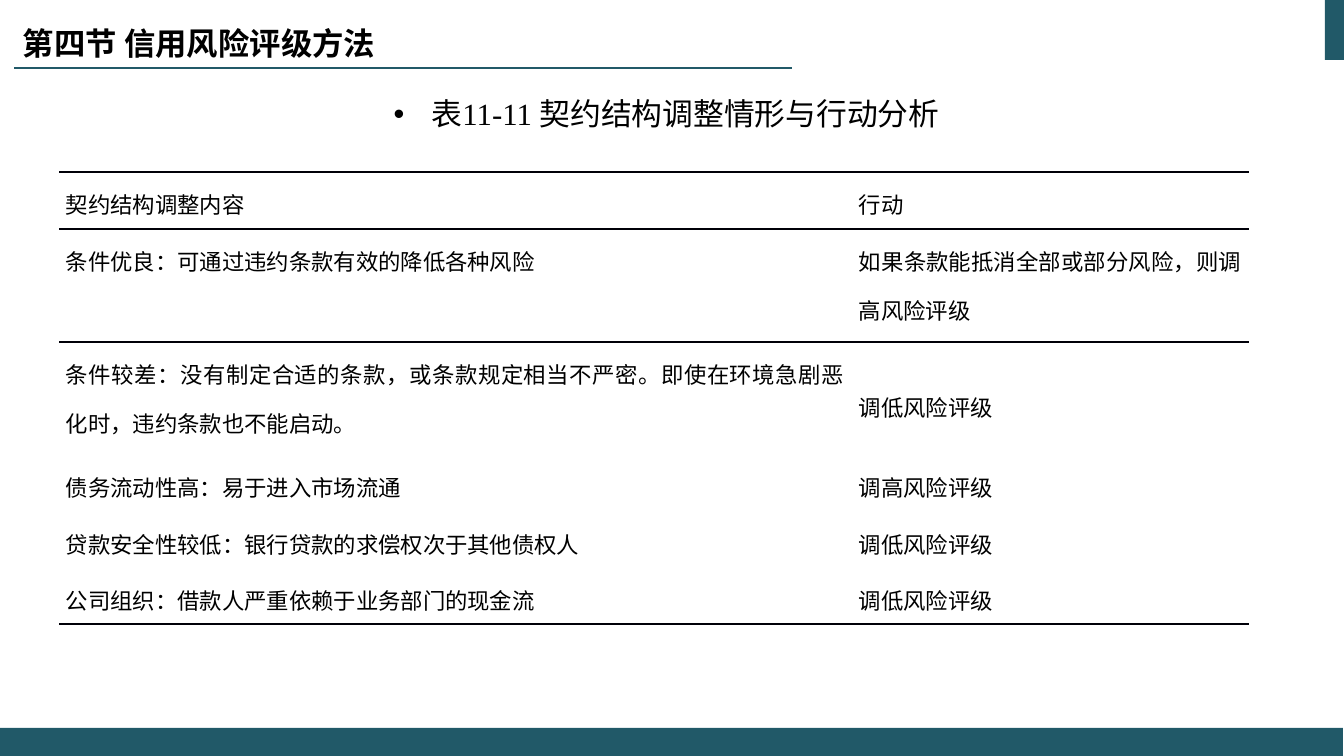
from lxml import etree
from pptx import Presentation
from pptx.dml.color import RGBColor
from pptx.enum.shapes import MSO_CONNECTOR, MSO_SHAPE
from pptx.enum.text import MSO_ANCHOR, MSO_AUTO_SIZE, PP_ALIGN
from pptx.oxml.ns import qn
from pptx.util import Emu, Pt

# Content
HEADING = "第四节 信用风险评级方法"
CAPTION = "表11-11 契约结构调整情形与行动分析"
LOWER, RAISE = "调低风险评级", "调高风险评级"
ROWS = [
    ("契约结构调整内容", "行动"),
    ("条件优良：可通过违约条款有效的降低各种风险",
     "如果条款能抵消全部或部分风险，则调高风险评级"),
    ("条件较差：没有制定合适的条款，或条款规定相当不严密。"
     "即使在环境急剧恶化时，违约条款也不能启动。", LOWER),
    ("债务流动性高：易于进入市场流通", RAISE),
    ("贷款安全性较低：银行贷款的求偿权次于其他债权人", LOWER),
    ("公司组织：借款人严重依赖于业务部门的现金流", LOWER),
]
COLUMN_WIDTHS = [793, 397]
ROW_HEIGHTS = [57, 113, 113, 57, 56, 56]
RULED_SIDES = {0: ("lnT", "lnB"), 1: ("lnT",), len(ROWS) - 1: ("lnB",)}
MIDDLE_CELL = (2, 1)

# Format
TEAL = RGBColor(0x21, 0x59, 0x68)
BLACK = RGBColor(0, 0, 0)
RULE = RGBColor(0, 0, 0x08)
SANS, SERIF = "Noto Sans CJK SC", "Times New Roman"
TOP, MIDDLE = MSO_ANCHOR.TOP, MSO_ANCHOR.MIDDLE
LEFT, CENTER, JUSTIFY = PP_ALIGN.LEFT, PP_ALIGN.CENTER, PP_ALIGN.JUSTIFY
RECTANGLE, STRAIGHT = MSO_SHAPE.RECTANGLE, MSO_CONNECTOR.STRAIGHT
GROW = MSO_AUTO_SIZE.SHAPE_TO_FIT_TEXT
NO_STYLE = "{2D5ABB26-0587-4C30-8999-92F81FD0307C}"
PX = 914400 / 100.8


def px(length):
    return Emu(round(length * PX))


def write(frame, text, size, font=SANS, align=LEFT, spacing=None,
          bold=False, small_caps=False, bullet_indent=0):
    frame.word_wrap = True
    paragraph = frame.paragraphs[0]
    paragraph.alignment = align
    if bullet_indent:
        properties = paragraph._p.get_or_add_pPr()
        properties.set("marL", str(px(bullet_indent)))
        properties.set("indent", str(-px(bullet_indent)))
        etree.SubElement(properties, qn("a:buFont"), typeface="Arial")
        etree.SubElement(properties, qn("a:buChar"), char="•")
    if spacing:
        paragraph.line_spacing = spacing
    run = paragraph.add_run()
    run.text = text
    run.font.size = Pt(size)
    run.font.name = font
    run.font.bold = bold
    run.font.color.rgb = BLACK
    run_properties = run._r.get_or_add_rPr()
    etree.SubElement(run_properties, qn("a:ea"), typeface=SANS)
    if small_caps:
        run_properties.set("cap", "small")


def add_bar(left, top, width, height):
    bar = slide.shapes.add_shape(RECTANGLE, px(left), px(top), px(width), px(height))
    bar.shadow.inherit = False
    bar.fill.solid()
    bar.fill.fore_color.rgb = TEAL
    bar.line.fill.background()


def rule_cell(cell, sides):
    for side in sides:
        line = etree.SubElement(cell._tc.get_or_add_tcPr(), qn(f"a:{side}"), w=str(Pt(1)))
        fill = etree.SubElement(line, qn("a:solidFill"))
        etree.SubElement(fill, qn("a:srgbClr"), val=str(RULE))


deck = Presentation()
deck.slide_width, deck.slide_height = px(1344), px(756)
slide = deck.slides.add_slide(deck.slide_layouts[6])

# Frame: corner block, heading underline, footer band
add_bar(1325, 0, 20, 60)
underline = slide.shapes.add_connector(STRAIGHT, px(792), px(68), px(14), px(68))
underline.line.color.rgb = TEAL
underline.line.width = Pt(1.5)
etree.SubElement(underline._element.spPr, qn("a:effectLst"))
add_bar(0, 728, 1343, 28)

# Heading
heading = slide.shapes.add_textbox(px(13), px(-3), px(838), px(86)).text_frame
heading.vertical_anchor = MIDDLE
write(heading, HEADING, 28, bold=True, small_caps=True)

# Table caption
caption = slide.shapes.add_textbox(px(11), px(68), px(1311), px(62)).text_frame
caption.auto_size = GROW
write(caption, CAPTION, 22, font=SERIF, align=CENTER, spacing=1.6, bullet_indent=38)

# Table
table = slide.shapes.add_table(
    len(ROWS), len(COLUMN_WIDTHS), px(59), px(172),
    px(sum(COLUMN_WIDTHS)), px(sum(ROW_HEIGHTS))).table
table.first_row = table.horz_banding = False
table._tbl.tblPr.find(qn("a:tableStyleId")).text = NO_STYLE
for column, width in zip(table.columns, COLUMN_WIDTHS):
    column.width = px(width)
for r, (row_texts, height) in enumerate(zip(ROWS, ROW_HEIGHTS)):
    table.rows[r].height = px(height)
    for c, text in enumerate(row_texts):
        cell = table.cell(r, c)
        cell.margin_left = cell.margin_right = px(7)
        cell.margin_top = cell.margin_bottom = 0
        cell.vertical_anchor = MIDDLE if (r, c) == MIDDLE_CELL else TOP
        rule_cell(cell, RULED_SIDES.get(r, ()))
        cell.fill.background()
        write(cell.text_frame, text, 16, align=JUSTIFY, spacing=1.5)

deck.save("out.pptx")
